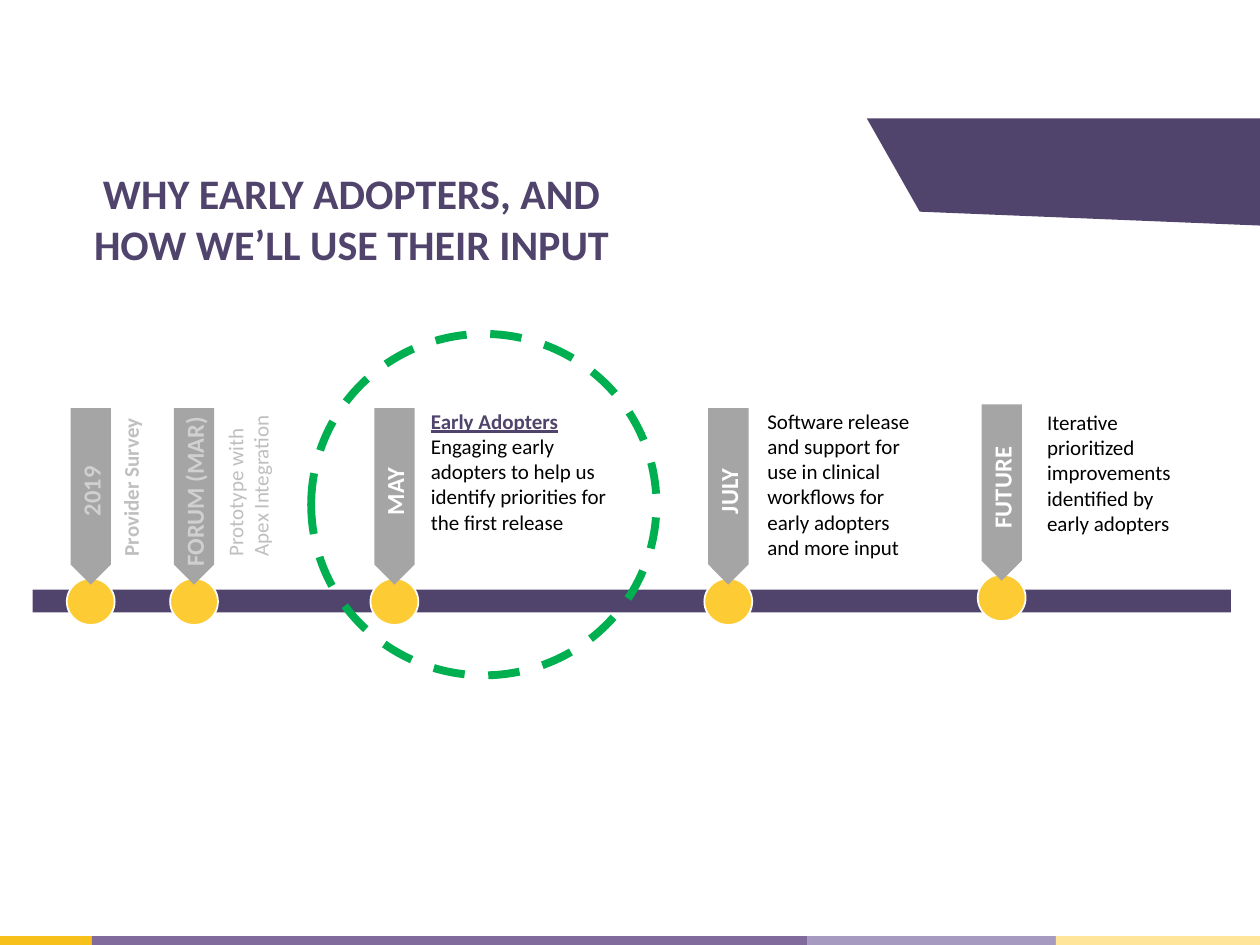
"""Build the early adopter timeline slide."""
from dataclasses import dataclass

from pptx import Presentation
from pptx.dml.color import RGBColor
from pptx.enum.dml import MSO_LINE
from pptx.enum.shapes import MSO_SHAPE as Shape
from pptx.enum.text import MSO_ANCHOR as Anchor, MSO_AUTO_SIZE as AutoSize, PP_ALIGN as Align
from pptx.util import Inches, Pt


@dataclass(frozen=True)
class Theme:
    font: str = "Calibri"
    purple: str = "50446C"
    marker: str = "FDCB34"
    arrow: str = "A5A5A5"
    past: str = "BFBFBF"
    past_label: str = "D0D0D0"
    white: str = "FFFFFF"
    black: str = "000000"
    highlight: str = "00B050"
    title_size: int = 24
    label_size: int = 14
    body_size: int = 12


THEME = Theme()
TITLE = "WHY EARLY ADOPTERS, AND HOW WE’LL USE THEIR INPUT"
FOOTER_BANDS = [(0.73, "F8C01B"), (5.68, "816B9D"), (1.97, "A69AC0"), (1.62, "FEE599")]
BANNER = [(10, 0.94), (6.88, 0.94), (7.3, 1.68), (10, 1.79)]
PAST_STAGES = [
    dict(center=0.72, label="2019", lines=["Provider Survey"], bold=True,
         note=(0.26, 3.57, 1.55, 0.28)),
    dict(center=1.54, label="FORUM (MAR)", lines=["Prototype with", "Apex Integration"], bold=False,
         note=(0.97, 3.25, 1.99, 0.48)),
]
COMING_STAGES = [
    dict(center=3.13, label="MAY", heading="Early Adopters", rise=0,
         text="Engaging early adopters to help us identify priorities for the first release",
         note=(3.35, 3.2, 1.54, 1.09)),
    dict(center=5.78, label="JULY", rise=0,
         text="Software release and support for use in clinical workflows for early adopters "
              "and more input",
         note=(6.02, 3.2, 1.38, 1.29)),
    dict(center=7.95, label="FUTURE", rise=0.03,
         text="Iterative prioritized improvements identified by early adopters",
         note=(8.24, 3.21, 1.29, 1.09)),
]
MARKER_WIDTH, MARKER_HEIGHT, MARKER_TOP = 0.38, 0.37, 4.59
ARROW_LENGTH, ARROW_WIDTH, ARROW_TOP = 1.4, 0.32, 3.78


def inches(values):
    return [Inches(value) for value in values]


def color(value):
    return RGBColor.from_string(value)


def paint(shape, fill):
    shape.shadow.inherit = False
    shape.fill.solid()
    shape.fill.fore_color.rgb = color(fill)
    shape.line.fill.background()


def add_filled(page, kind, place, fill):
    shape = page.shapes.add_shape(kind, *inches(place))
    paint(shape, fill)
    return shape


def set_frame(frame, anchor=Anchor.TOP, wrap=True):
    frame.auto_size = AutoSize.NONE
    frame.word_wrap = wrap
    frame.vertical_anchor = anchor
    frame.margin_left = frame.margin_right = Inches(0.07)
    frame.margin_top = frame.margin_bottom = Inches(0.04)


def write(para, text, size, ink, bold=False, align=Align.LEFT):
    para.text = text
    para.alignment = align
    para.font.name = THEME.font
    para.font.size = Pt(size)
    para.font.bold = bold
    para.font.color.rgb = color(ink)


def add_note(page, place, lines, ink, bold=False, rotation=0):
    box = page.shapes.add_textbox(*inches(place))
    box.rotation = rotation
    frame = box.text_frame
    set_frame(frame)
    for index, line in enumerate(lines):
        para = frame.paragraphs[0] if index == 0 else frame.add_paragraph()
        write(para, line, THEME.body_size, ink, bold)
    return frame


def add_stage(page, center, label, ink, rise=0):
    marker = add_filled(page, Shape.OVAL, (center - MARKER_WIDTH / 2, MARKER_TOP - rise,
                                           MARKER_WIDTH, MARKER_HEIGHT), THEME.marker)
    marker.line.color.rgb = color(THEME.white)
    marker.line.width = Pt(1)
    arrow = add_filled(page, Shape.PENTAGON, (center - ARROW_LENGTH / 2, ARROW_TOP - rise,
                                              ARROW_LENGTH, ARROW_WIDTH), THEME.arrow)
    arrow.rotation = 270
    arrow._element.spPr.xfrm.set("flipH", "1")
    set_frame(arrow.text_frame, Anchor.MIDDLE, wrap=False)
    write(arrow.text_frame.paragraphs[0], label, THEME.label_size, ink, True, Align.CENTER)


def add_title(page):
    title = page.shapes.title
    title.left, title.top, title.width, title.height = inches((0.37, 1.29, 4.84, 0.88))
    set_frame(title.text_frame)
    write(title.text_frame.paragraphs[0], TITLE, THEME.title_size, THEME.purple, True, Align.CENTER)


def add_decoration(page):
    left = 0
    for width, fill in FOOTER_BANDS:
        add_filled(page, Shape.RECTANGLE, (left, 7.43, width, 0.07), fill)
        left += width
    points = [inches(point) for point in BANNER]
    builder = page.shapes.build_freeform(*points[0])
    builder.add_line_segments(points[1:], close=True)
    paint(builder.convert_to_shape(), THEME.purple)


def add_timeline(page):
    add_filled(page, Shape.RECTANGLE, (0.26, 4.68, 9.51, 0.18), THEME.purple)
    for stage in PAST_STAGES:
        add_stage(page, stage["center"], stage["label"], THEME.past_label)
        add_note(page, stage["note"], stage["lines"], THEME.past, stage["bold"], rotation=270)
    for stage in COMING_STAGES:
        add_stage(page, stage["center"], stage["label"], THEME.white, stage["rise"])
        heading = stage.get("heading")
        lines = [heading, stage["text"]] if heading else [stage["text"]]
        frame = add_note(page, stage["note"], lines, THEME.black)
        if heading:
            font = frame.paragraphs[0].font
            font.bold = font.underline = True
            font.color.rgb = color(THEME.purple)


def add_highlight(page):
    ring = page.shapes.add_shape(Shape.OVAL, *inches((2.47, 2.65, 2.74, 2.71)))
    ring.shadow.inherit = False
    ring.fill.background()
    ring.line.color.rgb = color(THEME.highlight)
    ring.line.width = Pt(4.5)
    ring.line.dash_style = MSO_LINE.DASH


def main():
    deck = Presentation()
    deck.slide_width, deck.slide_height = inches((10, 7.5))
    page = deck.slides.add_slide(deck.slide_layouts.get_by_name("Title Only"))
    add_title(page)
    add_decoration(page)
    add_timeline(page)
    add_highlight(page)
    deck.save("out.pptx")


if __name__ == "__main__":
    main()
